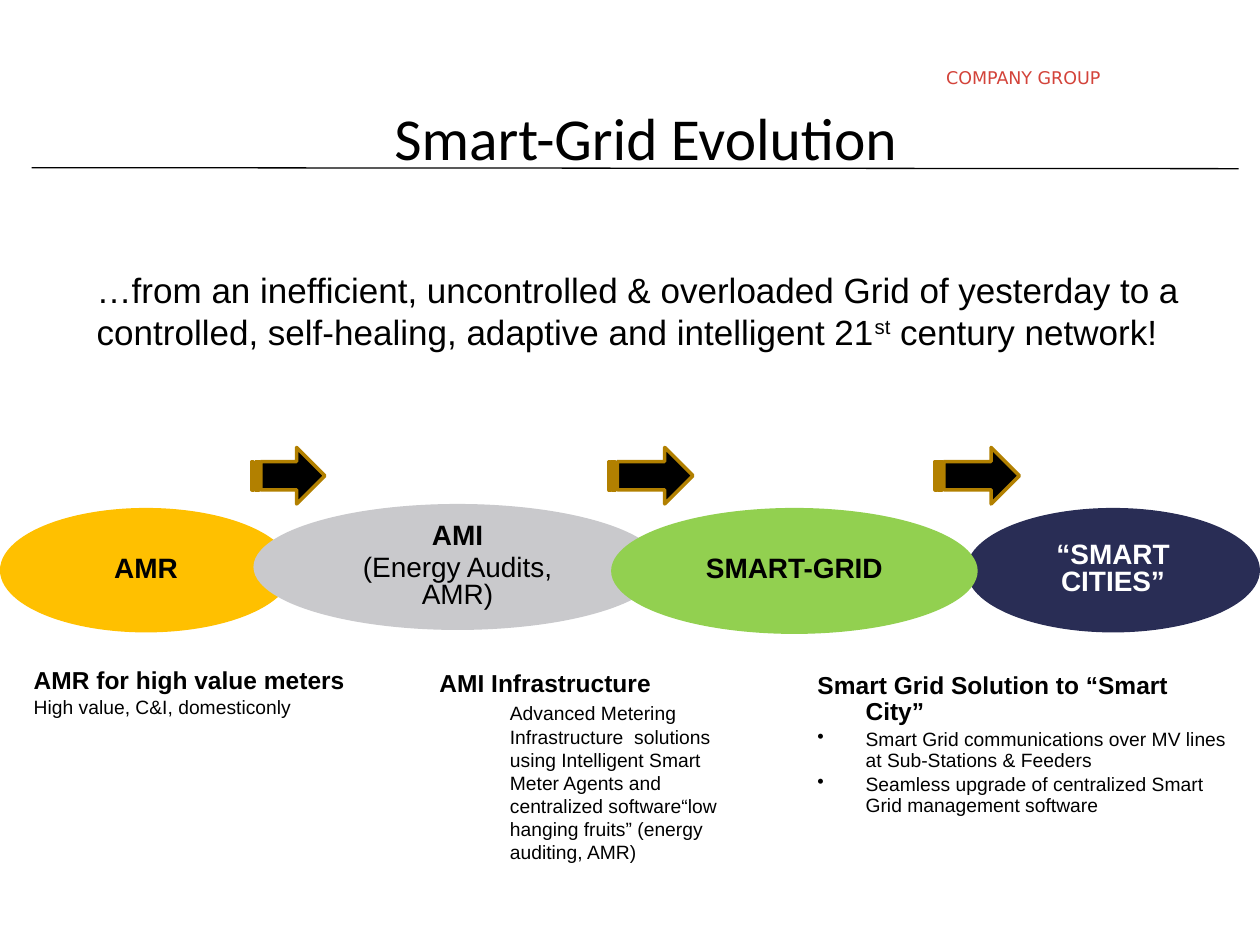
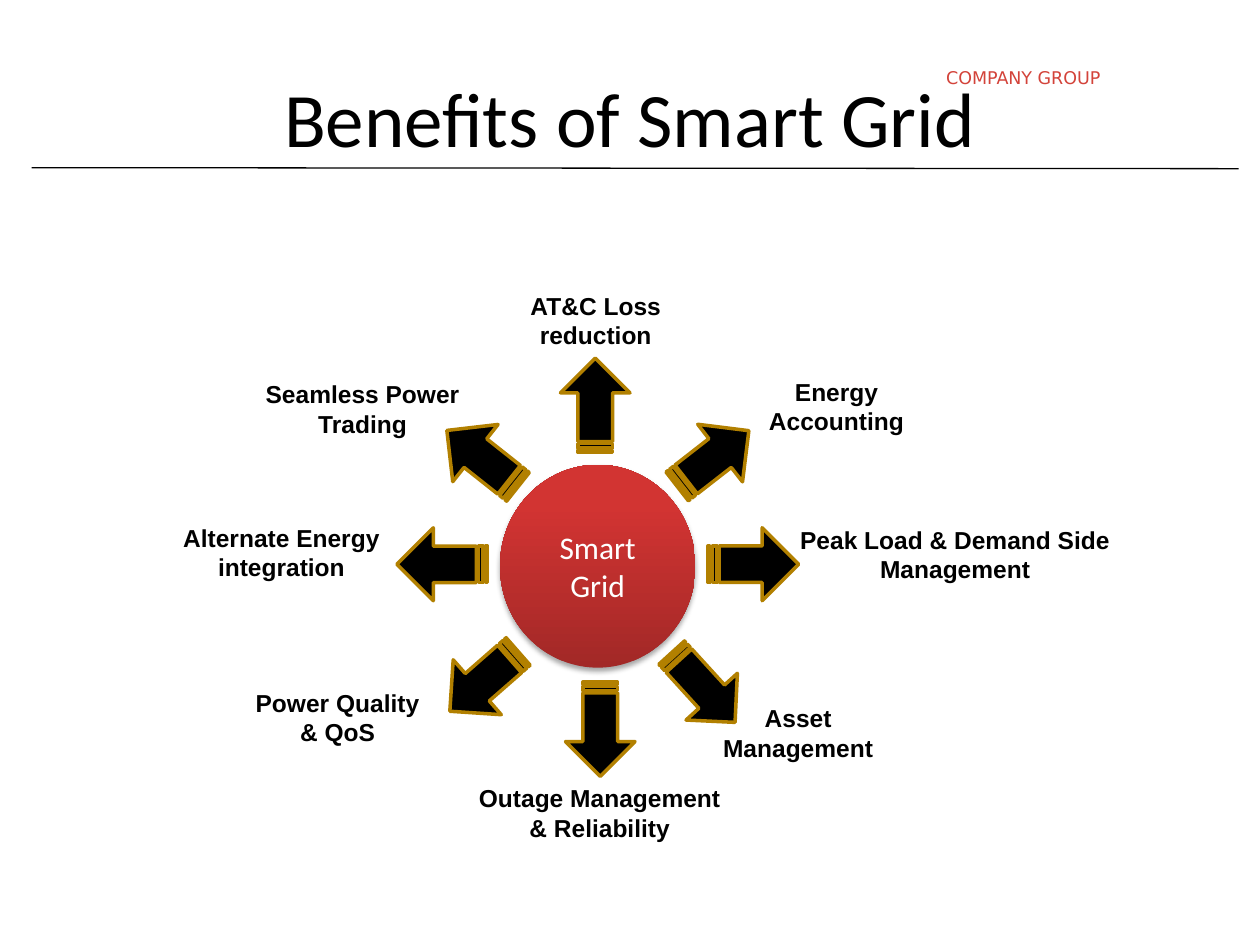
from lxml import etree
from pptx import Presentation
from pptx.dml.color import RGBColor
from pptx.enum.shapes import MSO_CONNECTOR, MSO_SHAPE
from pptx.enum.text import MSO_ANCHOR, PP_ALIGN
from pptx.oxml import parse_xml
from pptx.oxml.ns import nsdecls, qn
from pptx.util import Cm, Pt

LEFT, CENTER, RIGHT = PP_ALIGN.LEFT, PP_ALIGN.CENTER, PP_ALIGN.RIGHT
MIDDLE = MSO_ANCHOR.MIDDLE
OVAL = MSO_SHAPE.OVAL
STRIPED_ARROW = MSO_SHAPE.STRIPED_RIGHT_ARROW
STRAIGHT = MSO_CONNECTOR.STRAIGHT

BLACK = RGBColor(0x00, 0x00, 0x00)
WHITE = RGBColor(0xFF, 0xFF, 0xFF)
HEADER_RED = RGBColor(0xD3, 0x43, 0x3A)
NAVY = RGBColor(0x29, 0x2D, 0x55)
AMBER = RGBColor(0xFF, 0xC0, 0x00)
GREY = RGBColor(0xC9, 0xC9, 0xCC)
GREEN = RGBColor(0x92, 0xD0, 0x50)
ARROW_EDGE = RGBColor(0xB2, 0x80, 0x00)
HUB_DARK = RGBColor(0xA2, 0x28, 0x27)
HUB_LIGHT = RGBColor(0xD2, 0x34, 0x32)


def add_paragraph(tf, text, size, bold=False, color=BLACK, font="Arial",
                  align=LEFT, spacing=None):
    """Fill the empty first paragraph, or append one a fifth of a line lower."""
    p = tf.paragraphs[0]
    if p.runs:
        p = tf.add_paragraph()
        if spacing:
            p.space_before = Pt(size * 0.2)
    p.alignment = align
    p.line_spacing = spacing
    r = p.add_run()
    r.text = text
    r.font.size = Pt(size)
    r.font.bold = bold
    r.font.name = font
    r.font.color.rgb = color
    return p


def add_arrow(slide, x, y, w, h, angle=0):
    sp = slide.shapes.add_shape(STRIPED_ARROW, Cm(x), Cm(y), Cm(w), Cm(h))
    sp.rotation = angle
    sp.shadow.inherit = False
    sp.fill.solid()
    sp.fill.fore_color.rgb = BLACK
    sp.line.color.rgb = ARROW_EDGE
    sp.line.width = Pt(2)


prs = Presentation()
prs.slide_width, prs.slide_height = Cm(25.4), Cm(19.05)

# Shared header, title and rule
slides = []
for title, size, x, y, w, h in [
    ("Smart-Grid Evolution", 34, 1.9, 1.07, 22.23, 3.38),
    ("Benefits of Smart Grid", 44, 1.27, 0.76, 22.86, 3.18),
]:
    slide = prs.slides.add_slide(prs.slide_layouts[5])
    slides.append(slide)

    sp = slide.shapes.title
    sp.left, sp.top, sp.width, sp.height = Cm(x), Cm(y), Cm(w), Cm(h)
    sp.text_frame.vertical_anchor = MIDDLE
    add_paragraph(sp.text_frame, title, size, font="Calibri", align=CENTER)

    tf = slide.shapes.add_textbox(Cm(16.51), Cm(1.22), Cm(5.92), Cm(1.52)).text_frame
    tf.word_wrap = True
    add_paragraph(tf, "COMPANY GROUP", 10, color=HEADER_RED,
                  font="DejaVu Sans", align=RIGHT)

    rule = slide.shapes.add_connector(STRAIGHT, Cm(0.64), Cm(3.38), Cm(24.97), Cm(3.4))
    rule.line.color.rgb = BLACK
    rule.line.width = Pt(0.75)
    etree.SubElement(rule._element.spPr, qn("a:effectLst"))

evolution, benefits = slides

# Slide 1: tagline, stages, arrows and descriptions
tf = evolution.shapes.add_textbox(Cm(1.7), Cm(5.28), Cm(22.43), Cm(1.96)).text_frame
tf.word_wrap = True
p = add_paragraph(
    tf, "…from an inefficient, uncontrolled & overloaded Grid of yesterday to a "
    "controlled, self-healing, adaptive and intelligent 21", 20)
for text, baseline in [("st", "30000"), (" century network!", "0")]:
    r = p.add_run()
    r.text = text
    r.font.size = Pt(20)
    r.font.name = "Arial"
    r.font.color.rgb = BLACK
    r._r.get_or_add_rPr().set("baseline", baseline)

stages = [
    (19.48, 10.24, 5.92, 2.51, NAVY, WHITE, ["“SMART CITIES”"]),
    (0, 10.24, 5.89, 2.51, AMBER, BLACK, ["AMR"]),
    (5.11, 10.16, 8.23, 2.54, GREY, BLACK, ["AMI", "(Energy Audits, AMR)"]),
    (12.32, 10.24, 7.39, 2.54, GREEN, BLACK, ["SMART-GRID"]),
]
for x, y, w, h, fill, color, lines in stages:
    sp = evolution.shapes.add_shape(OVAL, Cm(x), Cm(y), Cm(w), Cm(h))
    sp.shadow.inherit = False
    sp.fill.solid()
    sp.fill.fore_color.rgb = fill
    sp.line.fill.background()
    for i, line in enumerate(lines):
        add_paragraph(sp.text_frame, line, 16, bold=i == 0, color=color,
                      align=CENTER, spacing=0.8)

for x, w in [(5.08, 1.47), (12.27, 1.7), (18.85, 1.7)]:
    add_arrow(evolution, x, 9.02, w, 1.14)

# Each detail row: text, left margin, first-line indent, line spacing, bullet
descriptions = [
    (0.43, 13.34, 6.91, 3.61, "AMR for high value meters", 1.42,
     [("High value, C&I, domesticonly", 1.42, -1.42, 0.9, False)]),
    (8.61, 13.41, 6.15, 3.81, "AMI Infrastructure", 1.42,
     [("Advanced Metering Infrastructure  solutions using Intelligent Smart "
       "Meter Agents and centralized software“low hanging fruits” (energy "
       "auditing, AMR)", 1.42, 0, 1.0, False)]),
    (16.23, 13.44, 8.89, 2.67, "Smart Grid Solution to “Smart City”", 0.97,
     [("Smart Grid communications over MV lines at Sub-Stations & Feeders",
       0.97, -0.97, 0.9, True),
      ("Seamless upgrade of centralized Smart Grid management software",
       0.97, -0.97, 0.9, True)]),
]
for x, y, w, h, heading, hang, details in descriptions:
    tf = evolution.shapes.add_textbox(Cm(x), Cm(y), Cm(w), Cm(h)).text_frame
    tf.word_wrap = True
    rows = [(heading, hang, -hang, 0.9, False)] + details
    for i, (text, margin, indent, spacing, bullet) in enumerate(rows):
        p = add_paragraph(tf, text, 11 if i else 14, bold=i == 0, spacing=spacing)
        pPr = p._p.get_or_add_pPr()
        pPr.set("marL", str(Cm(margin)))
        pPr.set("indent", str(Cm(indent)))
        if bullet:
            etree.SubElement(pPr, qn("a:buChar")).set("char", "•")

# Slide 2: hub with arrows pointing at the benefits
hub = benefits.shapes.add_shape(OVAL, Cm(10.08), Cm(9.37), Cm(3.94), Cm(4.09))
hub.line.fill.background()
hub.fill.gradient()
hub.fill.gradient_angle = 90
for stop, color, position in zip(hub.fill.gradient_stops, (HUB_DARK, HUB_LIGHT), (0, 0.8)):
    stop.color.rgb = color
    stop.position = position
hub._element.spPr.append(parse_xml(
    f'<a:effectLst {nsdecls("a")}>'
    f'<a:outerShdw blurRad="{Pt(3.1)}" dist="{Pt(1.8)}" dir="5400000" rotWithShape="0">'
    '<a:srgbClr val="000000"><a:alpha val="35000"/></a:srgbClr>'
    '</a:outerShdw></a:effectLst>'))
add_paragraph(hub.text_frame, "Smart Grid", 18, color=WHITE, font="Calibri", align=CENTER)

WIDE, SLIM = (1.83, 1.47), (1.9, 1.4)
for x, y, (w, h), angle in [
    (14.27, 10.64, WIDE, 0),
    (13.23, 13.16, SLIM, 47.7),
    (11.15, 14.0, SLIM, 90),
    (8.84, 13.0, WIDE, 138.8),
    (8.0, 10.64, WIDE, 180),
    (8.81, 8.51, WIDE, 218.4),
    (11.05, 7.47, SLIM, 270),
    (13.46, 8.51, WIDE, 322.1),
]:
    add_arrow(benefits, x, y, w, h, angle)

for x, y, w, h, lines in [
    (9.42, 5.74, 5.18, 1.45, ["AT&C Loss reduction"]),
    (14.4, 7.47, 4.93, 1.88, ["Energy Accounting"]),
    (15.85, 10.46, 6.81, 1.45, ["Peak Load & Demand Side Management"]),
    (13.74, 14.05, 4.7, 1.88, ["Asset Management"]),
    (8.56, 15.67, 7.06, 1.45, ["Outage Management", "& Reliability"]),
    (4.34, 13.74, 4.93, 1.45, ["Power Quality", "& QoS"]),
    (2.69, 10.41, 5.97, 1.88, ["Alternate Energy integration"]),
    (4.45, 7.52, 5.72, 1.88, ["Seamless Power Trading"]),
]:
    tf = benefits.shapes.add_textbox(Cm(x), Cm(y), Cm(w), Cm(h)).text_frame
    tf.word_wrap = True
    for line in lines:
        add_paragraph(tf, line, 14, bold=True, align=CENTER)

prs.save("out.pptx")
